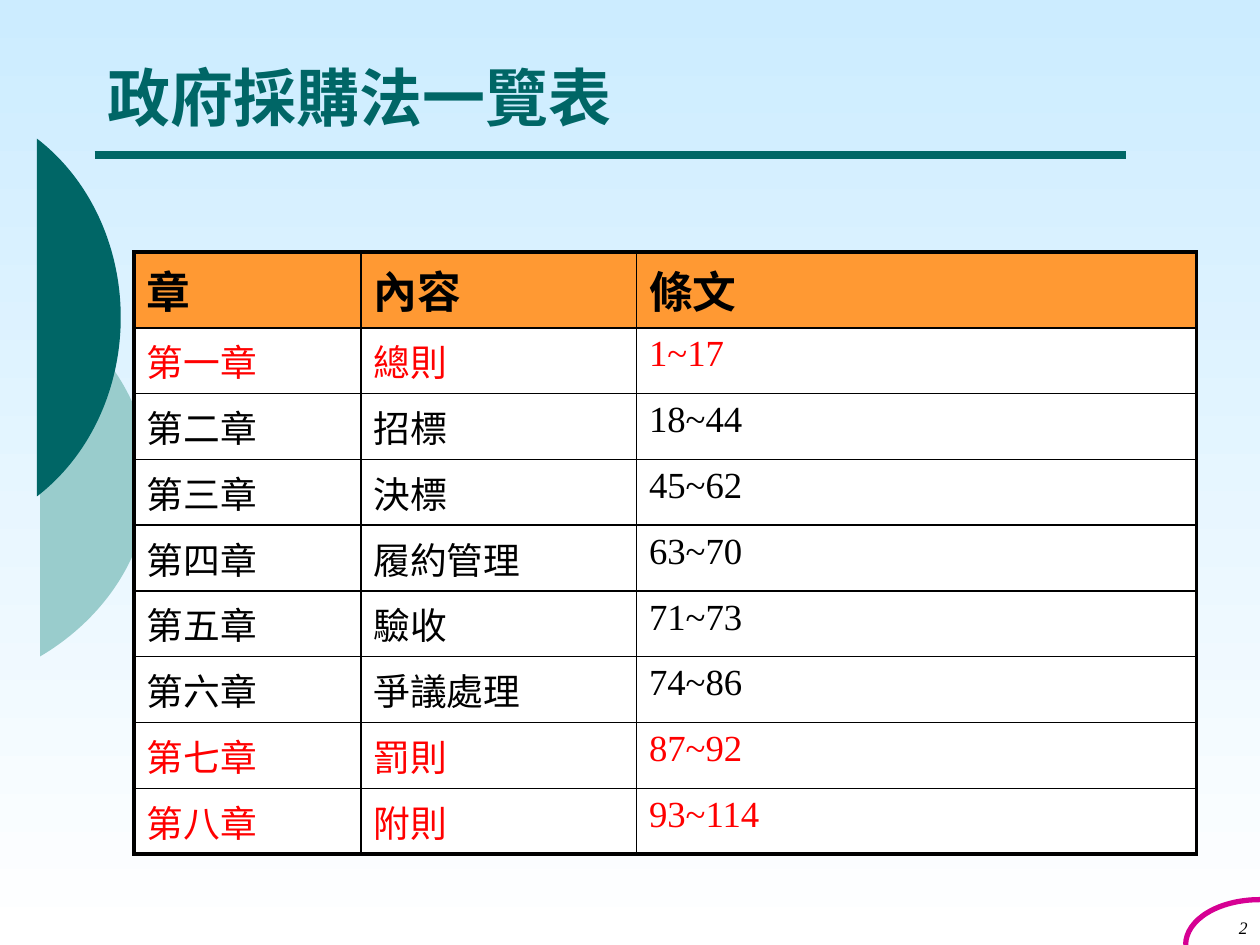
"""Build a slide that lists the chapters of the Government Procurement Act."""
from lxml.etree import SubElement
from pptx import Presentation
from pptx.dml.color import RGBColor
from pptx.enum.shapes import MSO_CONNECTOR as CONN
from pptx.enum.text import MSO_ANCHOR as ANCHOR, MSO_AUTO_SIZE as AUTO, PP_ALIGN as ALIGN
from pptx.oxml import parse_xml
from pptx.oxml.ns import nsdecls, qn
from pptx.util import Pt

FONT = "Times New Roman"
TEAL, BLACK, RED = "006666", "000000", "FF0000"


def rgb(value):
    return RGBColor.from_string(value)


def put_text(tf, text, size, color=BLACK, bold=False, italic=False,
             align=ALIGN.LEFT, spacing=None):
    p = tf.paragraphs[0]
    p.alignment = align
    p.line_spacing = spacing
    r = p.add_run()
    r.text = text
    r.font.name = FONT
    r.font.size = Pt(size)
    r.font.bold = bold
    r.font.italic = italic
    r.font.color.rgb = rgb(color)


prs = Presentation()
prs.slide_width, prs.slide_height = Pt(720), Pt(540)
s = prs.slides.add_slide(prs.slide_layouts[5])

bg = s.background.fill
bg.gradient()
bg.gradient_angle = 270
for stop, color, pos in zip(bg.gradient_stops, ("CCECFF", "FFFFFF"), (0, 1)):
    stop.color.rgb = rgb(color)
    stop.position = pos

curves = [
    ((-207.4, 151.2, 292.6, 246.2), "99CCCC",
     [(23, 172.8), (61.9, 195.8), (85.3, 234), (85.3, 273.9),
      (85.3, 313.9), (61.9, 352.1), (23, 375.1)]),
    ((-151.2, 57.6, 220.2, 248.4), TEAL,
     [(21.1, 79.2), (51.1, 102.2), (69, 140.4), (69, 181.4),
      (69, 222.5), (51.1, 260.6), (21.1, 283.7)]),
    ((677.5, 514.1, 42.5, 25.9), None,
     [(720, 514.1), (696.2, 514.1), (677.5, 525.6), (677.5, 540)]),
]
for (x, y, w, h), fill, pts in curves:
    fb = s.shapes.build_freeform(Pt(pts[0][0]), Pt(pts[0][1]))
    fb.add_line_segments([(Pt(px), Pt(py)) for px, py in pts[3::3]], close=False)
    sp = fb.convert_to_shape()
    sp.shadow.inherit = False
    sp.left, sp.top, sp.width, sp.height = Pt(x), Pt(y), Pt(w), Pt(h)
    outline = sp._element.spPr.find(".//" + qn("a:path"))
    outline.clear()
    outline.set("w", str(Pt(w)))
    outline.set("h", str(Pt(h)))
    for i, (px, py) in enumerate(pts):
        if i == 0:
            move = SubElement(outline, qn("a:moveTo"))
        elif i % 3 == 1:
            move = SubElement(outline, qn("a:cubicBezTo"))
        SubElement(move, qn("a:pt"), x=str(Pt(px - x)), y=str(Pt(py - y)))
    if fill:
        SubElement(outline, qn("a:close"))
        sp.fill.solid()
        sp.fill.fore_color.rgb = rgb(fill)
        sp.line.fill.background()
    else:
        sp.fill.background()
        sp.line.color.rgb = rgb("D60093")
        sp.line.width = Pt(3)

rule = s.shapes.add_connector(CONN.STRAIGHT, Pt(54), Pt(88.6), Pt(643.7), Pt(88.6))
rule.line.color.rgb = rgb(TEAL)
rule.line.width = Pt(4.5)
SubElement(rule._element.spPr, qn("a:effectLst"))

title = s.shapes.title
title.left, title.top, title.width, title.height = Pt(54), Pt(15), Pt(624), Pt(65)
number = s.shapes.add_textbox(Pt(655), Pt(502.5), Pt(65), Pt(37.5))
for sp in (title, number):
    tf = sp.text_frame
    tf.word_wrap = True
    tf.auto_size = AUTO.NONE
    tf.vertical_anchor = ANCHOR.BOTTOM
put_text(title.text_frame, "政府採購法一覽表", 36, TEAL, bold=True)
put_text(number.text_frame, "2", 10, italic=True, align=ALIGN.RIGHT, spacing=0.9)

rows = [
    ("章", "內容", "條文"),
    ("第一章", "總則", "1~17"),
    ("第二章", "招標", "18~44"),
    ("第三章", "決標", "45~62"),
    ("第四章", "履約管理", "63~70"),
    ("第五章", "驗收", "71~73"),
    ("第六章", "爭議處理", "74~86"),
    ("第七章", "罰則", "87~92"),
    ("第八章", "附則", "93~114"),
]
red_rows = (1, 7, 8)
widths = (129.6, 157.5, 320)
head_h, row_h = 39.6, 35.5
last_row, last_col = len(rows) - 1, len(widths) - 1

table = s.shapes.add_table(len(rows), len(widths), Pt(76.6), Pt(144), Pt(sum(widths)),
                           Pt(head_h + row_h * last_row)).table
table.first_row = table.horz_banding = False
for col, width in zip(table.columns, widths):
    col.width = Pt(width)
for i, row in enumerate(rows):
    table.rows[i].height = Pt(row_h if i else head_h)
    for j, text in enumerate(row):
        cell = table.cell(i, j)
        cell.fill.solid()
        cell.fill.fore_color.rgb = rgb("FFFFFF" if i else "FF9933")
        if i:
            put_text(cell.text_frame, text, 21, RED if i in red_rows else BLACK)
        else:
            put_text(cell.text_frame, text, 25, bold=True, align=ALIGN.JUSTIFY)
        outer = {"L": j == 0, "R": j == last_col, "T": i == 0, "B": i == last_row}
        for k, (side, thick) in enumerate(outer.items()):
            cell._tc.get_or_add_tcPr().insert(k, parse_xml(
                f'<a:ln{side} {nsdecls("a")} w="{Pt(2.25 if thick else 1)}"><a:solidFill>'
                f'<a:srgbClr val="{BLACK}"/></a:solidFill></a:ln{side}>'))

prs.save("out.pptx")
